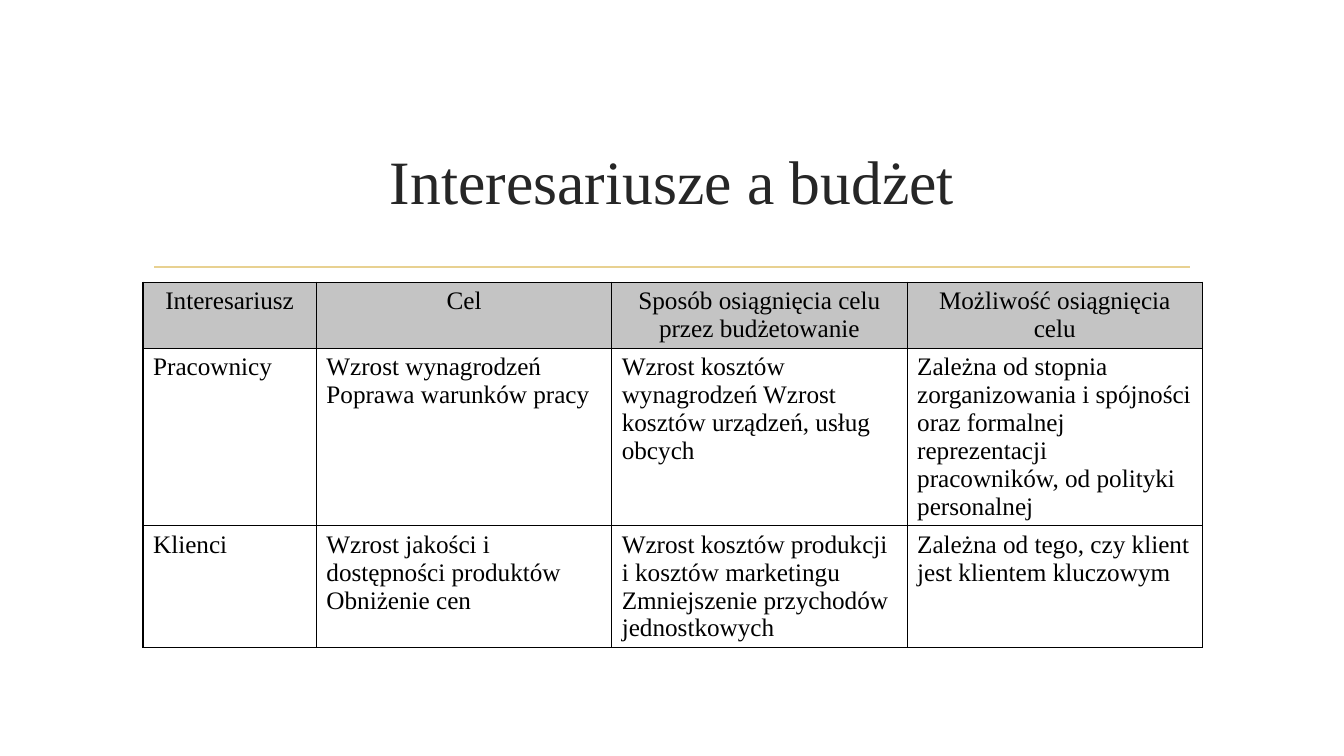
from dataclasses import dataclass

from lxml import etree
from pptx import Presentation
from pptx.dml.color import RGBColor
from pptx.enum.shapes import MSO_CONNECTOR
from pptx.enum.text import MSO_ANCHOR, PP_ALIGN
from pptx.oxml.ns import qn
from pptx.util import Pt

STRAIGHT = MSO_CONNECTOR.STRAIGHT
MIDDLE = MSO_ANCHOR.MIDDLE
CENTER, LEFT = PP_ALIGN.CENTER, PP_ALIGN.LEFT

COLORS = {"title": "262626", "text": "000000", "border": "000000",
          "header": "C4C4C4", "rule": "E8D191"}
FONT = "Times New Roman"
TITLE_ONLY_LAYOUT = 5
BORDER_WIDTH = Pt(1)
TABLE_LEFT, TABLE_TOP = 102.2, 201.6
COLUMN_WIDTHS = (123.8, 211, 211, 211)


@dataclass
class TableRow:
    height: float
    cells: tuple[str, ...]  # a line break starts a new paragraph
    is_header: bool = False


ROWS = (
    TableRow(47, ("Interesariusz", "Cel", "Sposób osiągnięcia celu przez budżetowanie",
                  "Możliwość osiągnięcia celu"), is_header=True),
    TableRow(126.8, (
        "Pracownicy",
        "Wzrost wynagrodzeń\nPoprawa warunków pracy",
        "Wzrost kosztów wynagrodzeń Wzrost kosztów urządzeń, usług obcych",
        "Zależna od stopnia zorganizowania i spójności oraz formalnej reprezentacji "
        "pracowników, od polityki personalnej")),
    TableRow(86.9, (
        "Klienci",
        "Wzrost jakości i dostępności produktów\nObniżenie cen",
        "Wzrost kosztów produkcji i kosztów marketingu\n"
        "Zmniejszenie przychodów jednostkowych",
        "Zależna od tego, czy klient jest klientem kluczowym")),
)


def set_attributes(target, values: dict) -> None:
    for name, value in values.items():
        setattr(target, name, value)


def format_text(text_frame, size: float, color: str, alignment) -> None:
    for paragraph in text_frame.paragraphs:
        paragraph.alignment = alignment
        set_attributes(paragraph.font, {"name": FONT, "size": Pt(size), "bold": False})
        paragraph.font.color.rgb = RGBColor.from_string(COLORS[color])


def add_borders(cell) -> None:
    properties = cell._tc.get_or_add_tcPr()
    for position, side in enumerate(("lnL", "lnR", "lnT", "lnB")):
        line = etree.Element(qn(f"a:{side}"), w=str(BORDER_WIDTH))
        fill = etree.SubElement(line, qn("a:solidFill"))
        etree.SubElement(fill, qn("a:srgbClr"), val=COLORS["border"])
        properties.insert(position, line)


def add_title(slide) -> None:
    title = slide.shapes.title
    set_attributes(title, {"left": Pt(102.2), "top": Pt(77), "width": Pt(756),
                           "height": Pt(103)})
    title.text_frame.text = "Interesariusze a budżet"
    title.text_frame.vertical_anchor = MIDDLE
    format_text(title.text_frame, 44, "title", CENTER)


def add_rule(slide) -> None:
    rule = slide.shapes.add_connector(STRAIGHT, Pt(110.2), Pt(190.8), Pt(850.3), Pt(190.8))
    rule.line.color.rgb = RGBColor.from_string(COLORS["rule"])
    rule.line.width = Pt(1.25)
    etree.SubElement(rule._element.spPr, qn("a:effectLst"))


def add_stakeholder_table(slide) -> None:
    table = slide.shapes.add_table(
        len(ROWS), len(COLUMN_WIDTHS), Pt(TABLE_LEFT), Pt(TABLE_TOP),
        Pt(sum(COLUMN_WIDTHS)), Pt(sum(row.height for row in ROWS))).table
    set_attributes(table, {"first_row": False, "horz_banding": False})
    for column, width in zip(table.columns, COLUMN_WIDTHS):
        column.width = Pt(width)
    for table_row, row in zip(table.rows, ROWS):
        table_row.height = Pt(row.height)
        for cell, text in zip(table_row.cells, row.cells):
            cell.text_frame.text = text
            format_text(cell.text_frame, 18, "text", CENTER if row.is_header else LEFT)
            if row.is_header:
                cell.fill.solid()
                cell.fill.fore_color.rgb = RGBColor.from_string(COLORS["header"])
            else:
                cell.fill.background()
            add_borders(cell)


def main() -> None:
    presentation = Presentation()
    set_attributes(presentation, {"slide_width": Pt(960), "slide_height": Pt(540)})
    slide = presentation.slides.add_slide(presentation.slide_layouts[TITLE_ONLY_LAYOUT])

    # Heading with the line below it
    add_rule(slide)
    add_title(slide)

    # Stakeholders and their goals
    add_stakeholder_table(slide)

    presentation.save("out.pptx")


if __name__ == "__main__":
    main()
